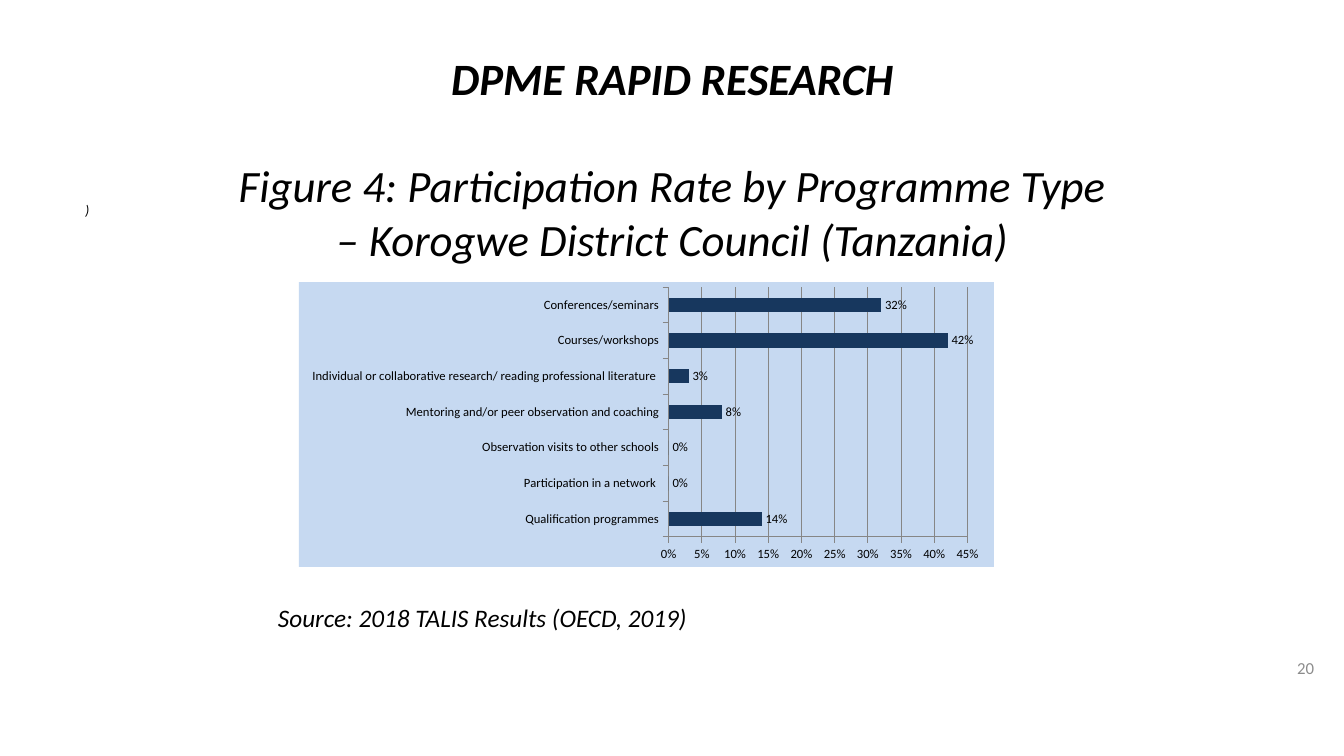
"""Build the slide on participation rate by programme type."""
import pptx
import pptx.chart.data
import pptx.dml.color
import pptx.enum.chart
import pptx.enum.text
import pptx.oxml
import pptx.oxml.ns
import pptx.util

FONT = "Calibri"
BLACK, GREY, NAVY, PALE, GRID = "000000", "8C8C8C", "17375E", "C6D9F1", "868686"
TEXTS = [
    ("DPME RAPID RESEARCH", (219, 50, 907, 55), "CENTER",
     {"size": 32, "bold": True, "italic": True}, BLACK),
    ("Figure 4: Participation Rate by Programme Type – Korogwe District Council (Tanzania)",
     (219, 157, 907, 110), "CENTER", {"size": 32, "italic": True}, BLACK),
    (")", (75, 196, 24, 28), "LEFT", {"size": 10, "italic": True}, BLACK),
    ("Source: 2018 TALIS Results (OECD, 2019)", (268, 600, 672, 34), "LEFT",
     {"size": 18, "italic": True}, BLACK),
    ("20", (1011, 648, 313, 40), "RIGHT", {"size": 12}, GREY),
]
RATES = [
    ("Qualification programmes", 0.14),
    ("Participation in a network ", 0),
    ("Observation visits to other schools", 0),
    ("Mentoring and/or peer observation and coaching", 0.08),
    ("Individual or collaborative research/ reading professional literature ", 0.03),
    ("Courses/workshops", 0.42),
    ("Conferences/seminars", 0.32),
]
CHART = (299, 282, 695, 285)
PLOT = (669, 287, 299, 250)
INSET = 10


def px(n):
    return round(n * 914400 / 100.8)


def rgb(value):
    return pptx.dml.color.RGBColor.from_string(value)


def set_font(font, color, size, **values):
    values.update(name=FONT, size=pptx.util.Pt(size))
    for key, value in values.items():
        setattr(font, key, value)
    font.color.rgb = rgb(color)


def add_text(s, text, box, align, values, color):
    tf = s.shapes.add_textbox(*map(px, box)).text_frame
    formats = {"word_wrap": True, "margin_left": px(INSET), "margin_right": px(INSET),
               "margin_top": 0, "margin_bottom": 0,
               "vertical_anchor": pptx.enum.text.MSO_ANCHOR.MIDDLE}
    for key, value in formats.items():
        setattr(tf, key, value)
    p = tf.paragraphs[0]
    p.alignment = getattr(pptx.enum.text.PP_ALIGN, align)
    r = p.add_run()
    r.text = text
    set_font(r.font, color, **values)


def place_plot(chart):
    left, top, width, height = CHART
    x, y, w, h = PLOT
    parts = {"x": (x - left) / width, "y": (y - top) / height, "w": w / width, "h": h / height}
    modes = "".join(f'<c:{k}Mode val="edge"/>' for k in "xy")
    sizes = "".join(f'<c:{k} val="{v:.3f}"/>' for k, v in parts.items())
    ns = pptx.oxml.ns.nsdecls("c", "a")
    area = chart._chartSpace.chart.plotArea
    for old in area.findall(pptx.oxml.ns.qn("c:layout")):
        area.remove(old)
    area.insert(0, pptx.oxml.parse_xml(
        f'<c:layout {ns}><c:manualLayout><c:layoutTarget val="inner"/>{modes}{sizes}'
        '</c:manualLayout></c:layout>'))
    chart._chartSpace.chart.addnext(pptx.oxml.parse_xml(
        f'<c:spPr {ns}><a:solidFill><a:srgbClr val="{PALE}"/></a:solidFill>'
        '<a:ln><a:noFill/></a:ln></c:spPr>'))


def add_rates(s):
    data = pptx.chart.data.CategoryChartData(number_format="0%")
    data.categories = [name for name, _ in RATES]
    data.add_series("Series 1", [rate for _, rate in RATES])
    chart = s.shapes.add_chart(
        pptx.enum.chart.XL_CHART_TYPE.BAR_CLUSTERED, *map(px, CHART), data).chart
    chart.has_legend = chart.has_title = False
    set_font(chart.font, BLACK, 9)
    plot = chart.plots[0]
    plot.gap_width, plot.vary_by_categories, plot.has_data_labels = 150, False, True
    labels = plot.data_labels
    formats = {"show_value": True, "number_format": "0%", "number_format_is_linked": False,
               "position": pptx.enum.chart.XL_LABEL_POSITION.OUTSIDE_END}
    for key, value in formats.items():
        setattr(labels, key, value)
    set_font(labels.font, BLACK, 9)
    fill = plot.series[0].format.fill
    fill.solid()
    fill.fore_color.rgb = rgb(NAVY)
    rates = chart.value_axis
    rates.minimum_scale, rates.maximum_scale, rates.major_unit = 0, 0.45, 0.05
    rates.has_major_gridlines = True
    rates.tick_labels.number_format = "0%"
    rates.tick_labels.number_format_is_linked = False
    for axis in (chart.category_axis, rates):
        axis.major_tick_mark = pptx.enum.chart.XL_TICK_MARK.OUTSIDE
        set_font(axis.tick_labels.font, BLACK, 9)
    for line in (rates.format.line, chart.category_axis.format.line,
                 rates.major_gridlines.format.line):
        line.color.rgb = rgb(GRID)
        line.width = pptx.util.Pt(0.75)
    place_plot(chart)


def main():
    prs = pptx.Presentation()
    prs.slide_width, prs.slide_height = px(1344), px(756)
    s = prs.slides.add_slide(prs.slide_layouts[6])
    for item in TEXTS:
        add_text(s, *item)
    add_rates(s)
    prs.save("out.pptx")


if __name__ == "__main__":
    main()
